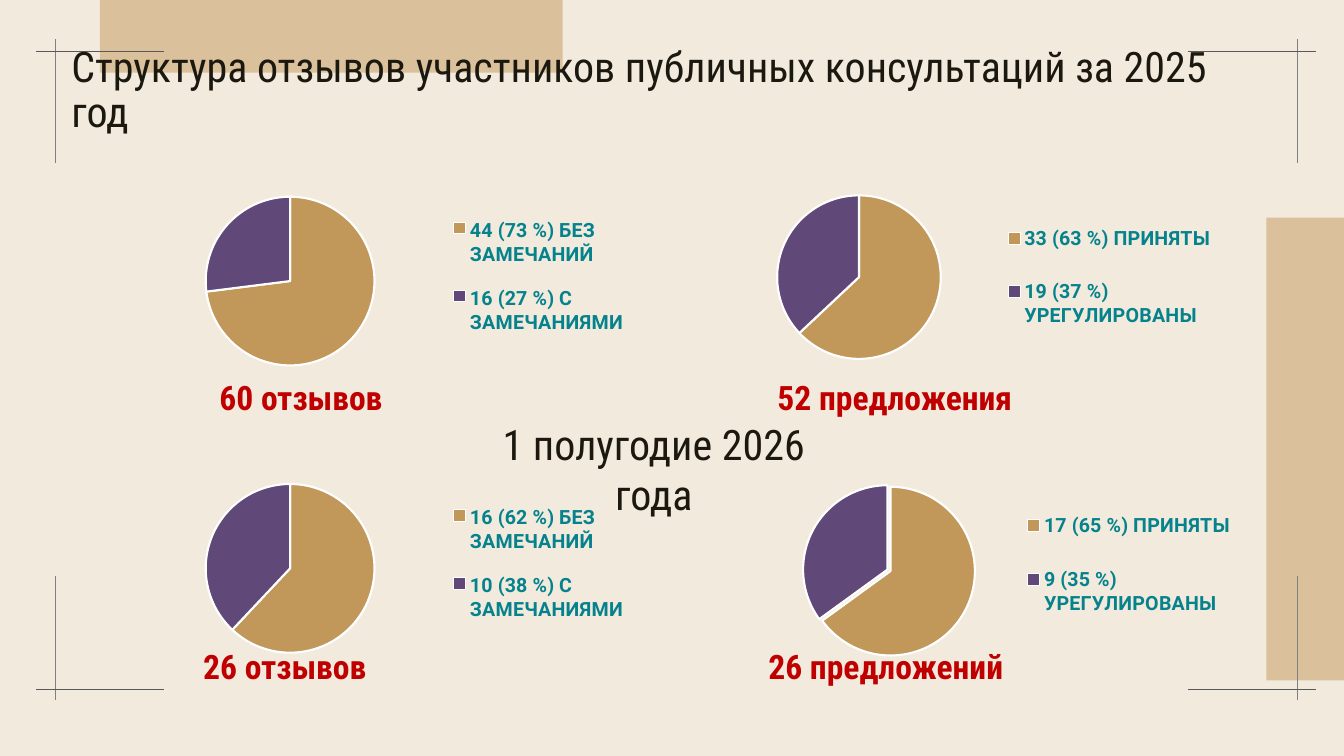
from lxml import etree
from pptx import Presentation
from pptx import util as u
from pptx.chart import data
from pptx.dml.color import RGBColor
from pptx.enum import chart as charts, shapes, text
from pptx.oxml import ns

HUES = {"back": "F3EADE", "band": "DAC19B", "post": "808080", "rail": "595959",
        "ink": "1B1810", "red": "C00000", "teal": "05828C", "gold": "C19859",
        "plum": "604878", "white": "FFFFFF", "black": "000000"}


class Deck:
    scale = 9144
    font = "Roboto Condensed"

    def __init__(self, wide, high):
        self.show = Presentation()
        self.show.slide_width, self.show.slide_height = self.px(wide, high)
        self.slide = self.show.slides.add_slide(self.show.slide_layouts[6])
        self.paint(self.slide.background.fill, "back")

    def px(self, *nums):
        return [u.Emu(n * self.scale) for n in nums]

    def hue(self, name):
        return RGBColor.from_string(HUES[name])

    def paint(self, fill, name):
        fill.solid()
        fill.fore_color.rgb = self.hue(name)

    def style(self, font, size, name, face, bold=False):
        font.size, font.name, font.bold = u.Pt(size), face, bold
        font.color.rgb = self.hue(name)

    def band(self, *box):
        rect = self.slide.shapes.add_shape(shapes.MSO_SHAPE.RECTANGLE, *self.px(*box))
        rect.shadow.inherit = False
        self.paint(rect.fill, "band")
        rect.line.fill.background()

    def line(self, ends, name):
        rule = self.slide.shapes.add_connector(shapes.MSO_CONNECTOR.STRAIGHT, *self.px(*ends))
        rule.line.width = u.Pt(1)
        rule.line.color.rgb = self.hue(name)
        etree.SubElement(rule._element.spPr, ns.qn("a:effectLst"))

    def words(self, line, box, size, name, bold=False):
        frame = self.slide.shapes.add_textbox(*self.px(*box)).text_frame
        frame.word_wrap = True
        para = frame.paragraphs[0]
        run = para.add_run()
        run.text = line
        self.style(run.font, size, name, self.font, bold)
        return frame, para

    def title(self, line, box):
        frame, para = self.words(line, box, 30, "ink")
        frame.vertical_anchor = text.MSO_ANCHOR.MIDDLE
        para.line_spacing = 0.9

    def label(self, line, box, size=24, name="red", bold=True):
        frame, para = self.words(line, box, size, name, bold)
        frame.margin_left = frame.margin_right = frame.margin_bottom = 0
        para.alignment = text.PP_ALIGN.CENTER

    def place(self, node, spot, box):
        for old in node.findall(ns.qn("c:layout")):
            node.remove(old)
        outer = etree.Element(ns.qn("c:layout"))
        inner = etree.SubElement(outer, ns.qn("c:manualLayout"))
        pairs = [("xMode", "edge"), ("yMode", "edge"), *zip("xywh", box)]
        if spot == 0:
            pairs.insert(0, ("layoutTarget", "inner"))
        for tag, val in pairs:
            etree.SubElement(inner, ns.qn("c:" + tag)).set("val", str(val))
        node.insert(spot, outer)

    def burst(self, node, size):
        push = etree.Element(ns.qn("c:explosion"))
        push.set("val", str(size))
        node.find(ns.qn("c:spPr")).addprevious(push)

    def pie(self, box, cats, vals, plot, key, burst=0):
        feed = data.CategoryChartData()
        feed.categories = cats
        feed.add_series("Series 1", vals)
        kind = charts.XL_CHART_TYPE.PIE
        chart = self.slide.shapes.add_chart(kind, *self.px(*box), feed).chart
        chart.has_title = False
        self.style(chart.font, 10, "black", "Calibri")
        chart.has_legend = True
        legend = chart.legend
        legend.position = charts.XL_LEGEND_POSITION.RIGHT
        legend.include_in_layout = False
        self.style(legend.font, 14, "teal", "Roboto", True)
        self.place(chart._chartSpace.chart.plotArea, 0, plot)
        self.place(legend._element, 1, key)
        chart.plots[0].vary_by_categories = True
        row = chart.plots[0].series[0]
        for i, name in enumerate(("gold", "plum")):
            form = row.points[i].format
            self.paint(form.fill, name)
            form.line.width = u.Pt(1.5)
            form.line.color.rgb = self.hue("white")
        if burst:
            for node in row._element.findall(ns.qn("c:dPt")):
                self.burst(node, burst)


def main():
    deck = Deck(1333, 750)
    deck.band(1256, 216, 77, 459)
    deck.band(99, 0, 459, 72)
    for x in (55, 1287):
        for y in (39, 571):
            deck.line((x, y, x, y + 123), "post")
    for x in (36, 1178):
        for y in (51, 684):
            deck.line((x, y, x + 127, y), "rail")

    deck.title("Структура отзывов участников публичных консультаций за 2025 год",
               (61, 18, 1150, 145))
    plot = (0.08, 0.05, 0.46, 0.91)
    left = (0.58, 0.06, 0.35, 0.84)
    pies = [
        ((116, 186, 554, 184), ("44 (73 %) БЕЗ ЗАМЕЧАНИЙ", "16 (27 %) С ЗАМЕЧАНИЯМИ"),
         (73, 27), plot, left),
        ((710, 180, 507, 190), ("33 (63 %) ПРИНЯТЫ", "19 (37 %) УРЕГУЛИРОВАНЫ"),
         (63, 37), (0.12, 0.07, 0.32, 0.86), (0.56, 0.08, 0.42, 0.84)),
        ((116, 471, 554, 184), ("16 (62 %) БЕЗ ЗАМЕЧАНИЙ", "10 (38 %) С ЗАМЕЧАНИЯМИ"),
         (62, 38), plot, left),
        ((710, 473, 554, 184), ("17 (65 %) ПРИНЯТЫ", "9 (35 %) УРЕГУЛИРОВАНЫ"),
         (65, 35), plot, (0.55, 0.04, 0.38, 0.87), 2),
    ]
    for item in pies:
        deck.pie(*item)
    for line, x, y in (("60 отзывов", 132, 369), ("52 предложения", 721, 369),
                       ("26 отзывов", 116, 636), ("26 предложений", 712, 636)):
        deck.label(line, (x, y, 333, 45))
    deck.label("1 полугодие 2026 года", (482, 410, 333, 56), 30, "ink", False)
    deck.show.save("out.pptx")


if __name__ == "__main__":
    main()
